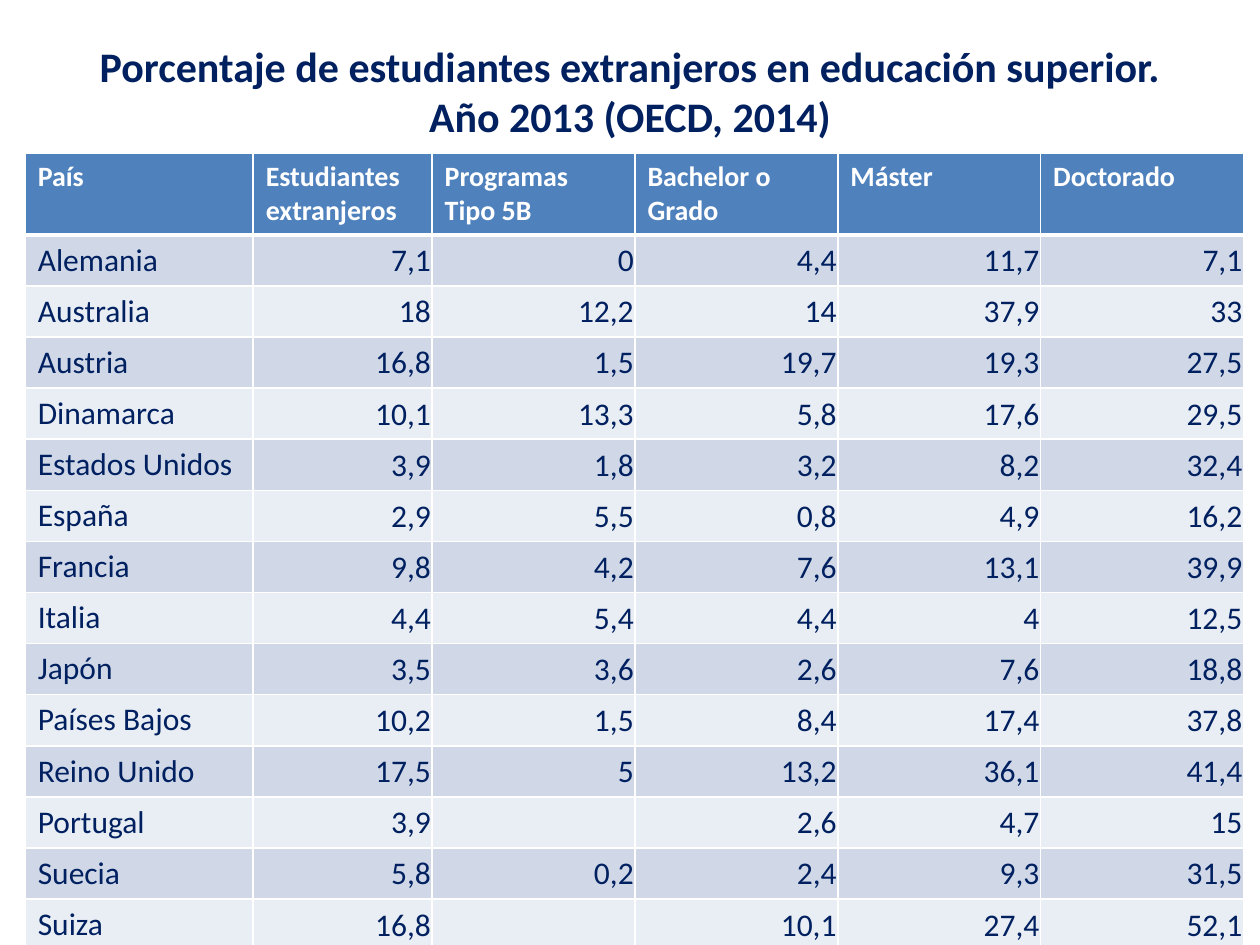
from typing import NamedTuple

from lxml.etree import SubElement
from pptx import Presentation
from pptx.dml.color import RGBColor
from pptx.enum.text import MSO_ANCHOR, PP_ALIGN
from pptx.oxml.ns import qn
from pptx.util import Inches, Pt

WIDE, HIGH = 10, 7.5
NAVY, WHITE, BLUE = "002060", "FFFFFF", "4F81BD"
BANDS = ("D0D8E8", "E9EDF4")
COLS = [1.81, 1.42] + [1.61] * 4
HEAD_ROW, BODY_ROW = 0.53, 0.38
TITLE = ("Porcentaje de estudiantes extranjeros en educación superior. "
         "Año 2013 (OECD, 2014)")
HEADS = ["País", "Estudiantes extranjeros", "Programas\nTipo 5B",
         "Bachelor o\nGrado", "Máster", "Doctorado"]


class Land(NamedTuple):
    name: str
    total: str
    type_b: str
    grade: str
    master: str
    doctor: str


LANDS = [
    Land("Alemania", "7,1", "0", "4,4", "11,7", "7,1"),
    Land("Australia", "18", "12,2", "14", "37,9", "33"),
    Land("Austria", "16,8", "1,5", "19,7", "19,3", "27,5"),
    Land("Dinamarca", "10,1", "13,3", "5,8", "17,6", "29,5"),
    Land("Estados Unidos", "3,9", "1,8", "3,2", "8,2", "32,4"),
    Land("España", "2,9", "5,5", "0,8", "4,9", "16,2"),
    Land("Francia", "9,8", "4,2", "7,6", "13,1", "39,9"),
    Land("Italia", "4,4", "5,4", "4,4", "4", "12,5"),
    Land("Japón", "3,5", "3,6", "2,6", "7,6", "18,8"),
    Land("Países Bajos", "10,2", "1,5", "8,4", "17,4", "37,8"),
    Land("Reino Unido", "17,5", "5", "13,2", "36,1", "41,4"),
    Land("Portugal", "3,9", "", "2,6", "4,7", "15"),
    Land("Suecia", "5,8", "0,2", "2,4", "9,3", "31,5"),
    Land("Suiza", "16,8", "", "10,1", "27,4", "52,1"),
]


class Style(NamedTuple):
    size: int
    ink: str
    bold: bool = False


HEAD = Style(16, WHITE, True)
BODY = Style(18, NAVY)


def paint(target, tone: str) -> None:
    """Give a solid colour to a fill."""
    target.solid()
    target.fore_color.rgb = RGBColor.from_string(tone)


def write(frame, text: str, style: Style, align=PP_ALIGN.LEFT) -> None:
    """Add one paragraph per line, each with a formatted run."""
    for i, line in enumerate(text.split("\n")):
        para = frame.add_paragraph() if i else frame.paragraphs[0]
        para.alignment = align
        if not line:
            continue
        run = para.add_run()
        run.text = line
        font = run.font
        font.name, font.size, font.bold = "Calibri", Pt(style.size), style.bold
        font.color.rgb = RGBColor.from_string(style.ink)


def edge(cell, top: int, base: int) -> None:
    """Draw white cell borders; widths in points."""
    props = cell._tc.get_or_add_tcPr()
    for side, width in (("L", 1), ("R", 1), ("T", top), ("B", base)):
        line = SubElement(props, qn(f"a:ln{side}"), w=str(Pt(width)))
        fill = SubElement(line, qn("a:solidFill"))
        SubElement(fill, qn("a:srgbClr"), val=WHITE)


def fill_cell(cell, text: str, row: int, col: int) -> None:
    """Style one cell by its place in the grid."""
    edge(cell, 3 if row == 1 else 1, 3 if row == 0 else 1)
    paint(cell.fill, BANDS[(row - 1) % 2] if row else BLUE)
    if row and col and text:
        cell.margin_left = cell.margin_right = cell.margin_top = Inches(0.01)
        cell.margin_bottom = 0
        cell.vertical_anchor = MSO_ANCHOR.MIDDLE
    align = PP_ALIGN.RIGHT if row and col else PP_ALIGN.LEFT
    write(cell.text_frame, text, BODY if row else HEAD, align)


def main() -> None:
    deck = Presentation()
    deck.slide_width, deck.slide_height = Inches(WIDE), Inches(HIGH)
    slide = deck.slides.add_slide(deck.slide_layouts[5])

    # Title
    title = slide.shapes.title
    title.left, title.top = Inches(0.05 * WIDE), Inches(0.13)
    title.width, title.height = Inches(0.9 * WIDE), Inches(1.18)
    title.text_frame.vertical_anchor = MSO_ANCHOR.MIDDLE
    write(title.text_frame, TITLE, Style(24, NAVY, True), PP_ALIGN.CENTER)

    # Table
    rows = [HEADS, *LANDS]
    tall = HEAD_ROW + BODY_ROW * len(LANDS)
    table = slide.shapes.add_table(
        len(rows), len(COLS), Inches(0.02 * WIDE), Inches(1.22),
        Inches(sum(COLS)), Inches(tall)).table
    for col, width in zip(table.columns, COLS):
        col.width = Inches(width)
    for r, texts in enumerate(rows):
        table.rows[r].height = Inches(BODY_ROW if r else HEAD_ROW)
        for c, text in enumerate(texts):
            fill_cell(table.cell(r, c), text, r, c)

    deck.save("out.pptx")


if __name__ == "__main__":
    main()
